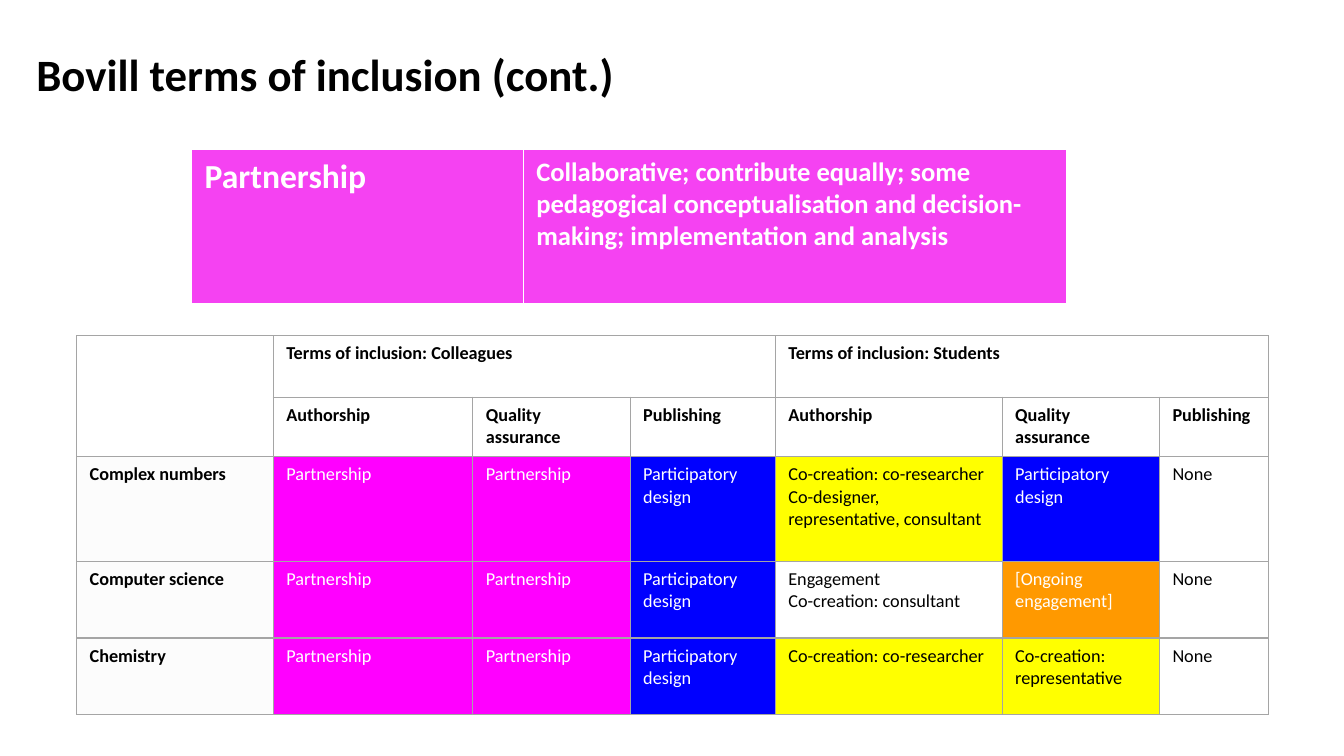
from pptx import Presentation
from pptx.dml.color import RGBColor
from pptx.enum.text import MSO_ANCHOR, PP_ALIGN
from pptx.oxml import parse_xml
from pptx.oxml.ns import nsdecls
from pptx.util import Inches, Pt

FONT = "Calibri"
BLACK = RGBColor(0x00, 0x00, 0x00)
WHITE = RGBColor(0xFF, 0xFF, 0xFF)
PALE = RGBColor(0xFC, 0xFC, 0xFC)
GREY = RGBColor(0xA5, 0xA5, 0xA5)
PINK = RGBColor(0xF5, 0x42, 0xF2)
MAGENTA = RGBColor(0xFF, 0x00, 0xFF)
BLUE = RGBColor(0x00, 0x00, 0xFF)
YELLOW = RGBColor(0xFF, 0xFF, 0x00)
ORANGE = RGBColor(0xFF, 0x99, 0x00)

FILLS = {
    "Partnership": MAGENTA,
    "Participatory design": BLUE,
    "Co-creation: co-researcher": YELLOW,
    "Co-creation: representative": YELLOW,
    "[Ongoing engagement]": ORANGE,
    "Engagement": None,
    "None": WHITE,
}
DARK = (MAGENTA, BLUE, ORANGE)
COLS = [1.95, 1.98, 1.56, 1.44, 2.25, 1.56, 1.08]
GROUPS = ["Terms of inclusion: Colleagues", "Terms of inclusion: Students"]
HEADS = ["Authorship", "Quality assurance", "Publishing"]
ROWS = [
    ["Complex numbers", "Partnership", "Partnership", "Participatory design",
     "Co-creation: co-researcher\nCo-designer, representative, consultant",
     "Participatory design", "None"],
    ["Computer science", "Partnership", "Partnership", "Participatory design",
     "Engagement\nCo-creation: consultant", "[Ongoing engagement]", "None"],
    ["Chemistry", "Partnership", "Partnership", "Participatory design",
     "Co-creation: co-researcher", "Co-creation: representative", "None"],
]


def style(frame, size, color, bold):
    for para in frame.paragraphs:
        for run in para.runs:
            font = run.font
            font.name, font.size, font.bold = FONT, Pt(size), bold
            font.color.rgb = color


def edge(cell, color, base):
    """Draw 1 pt borders, with the bottom one base points wide."""
    props = cell._tc.get_or_add_tcPr()
    for side, width in zip("LRTB", (1, 1, 1, base)):
        props.append(parse_xml(
            f'<a:ln{side} {nsdecls("a")} w="{Pt(width)}"><a:solidFill>'
            f'<a:srgbClr val="{color}"/></a:solidFill></a:ln{side}>'))


def add_grid(slide, left, top, cols, rows, line, base=1):
    """Add a bordered table without banding, sized by its columns and rows."""
    table = slide.shapes.add_table(
        len(rows), len(cols), Inches(left), Inches(top),
        Inches(sum(cols)), Inches(sum(rows))).table
    table.first_row = table.horz_banding = False
    for col, width in zip(table.columns, cols):
        col.width = Inches(width)
    for row, height in zip(table.rows, rows):
        row.height = Inches(height)
    for cell in table.iter_cells():
        cell.margin_left = cell.margin_right = Inches(0.13)
        cell.margin_top = cell.margin_bottom = Inches(0.07)
        edge(cell, line, base)
    return table


def fill_cell(cell, text, fill, color=BLACK, size=13, bold=False):
    cell.text_frame.text = text
    style(cell.text_frame, size, color, bold)
    if fill is None:
        cell.fill.background()
    else:
        cell.fill.solid()
        cell.fill.fore_color.rgb = fill


def add_title(slide, left, top, width, height):
    title = slide.shapes.title
    title.left, title.top = Inches(left), Inches(top)
    title.width, title.height = Inches(width), Inches(height)
    frame = title.text_frame
    frame.text = "Bovill terms of inclusion (cont.)"
    frame.vertical_anchor = MSO_ANCHOR.MIDDLE
    frame.paragraphs[0].alignment = PP_ALIGN.LEFT
    frame.paragraphs[0].line_spacing = 0.9
    style(frame, 32, BLACK, True)


def add_term(slide, left, top):
    table = add_grid(slide, left, top, [3.29, 5.39], [1.54], WHITE, 3)
    fill_cell(table.cell(0, 0), "Partnership", PINK, WHITE, 24, True)
    fill_cell(table.cell(0, 1),
              "Collaborative; contribute equally; some pedagogical "
              "conceptualisation and decision-making; implementation "
              "and analysis", PINK, WHITE, 19, True)


def add_heads(slide, left, top):
    table = add_grid(slide, left, top, COLS, [0.61, 0.59], GREY)
    for cell in table.iter_cells():
        fill_cell(cell, "", WHITE)
    table.cell(0, 0).merge(table.cell(1, 0))
    for i, group in enumerate(GROUPS):
        first = 1 + i * len(HEADS)
        table.cell(0, first).merge(table.cell(0, first + len(HEADS) - 1))
        fill_cell(table.cell(0, first), group, WHITE, bold=True)
        for j, head in enumerate(HEADS):
            fill_cell(table.cell(1, first + j), head, WHITE, bold=True)


def add_cases(slide, left, top):
    table = add_grid(slide, left, top, COLS, [1.04, 0.76, 0.76], GREY)
    for i, (name, *terms) in enumerate(ROWS):
        fill_cell(table.cell(i, 0), name, PALE, bold=True)
        for j, term in enumerate(terms, 1):
            fill = FILLS[term.split("\n")[0]]
            color = WHITE if fill in DARK else BLACK
            fill_cell(table.cell(i, j), term, fill, color)


def main():
    deck = Presentation()
    deck.slide_width, deck.slide_height = Inches(13.33), Inches(7.5)
    slide = deck.slides.add_slide(deck.slide_layouts[5])
    add_term(slide, 1.9, 1.48)
    add_title(slide, 0.26, 0.34, 12.8, 0.84)
    add_cases(slide, 0.76, 4.53)
    add_heads(slide, 0.76, 3.33)
    deck.save("out.pptx")


if __name__ == "__main__":
    main()
